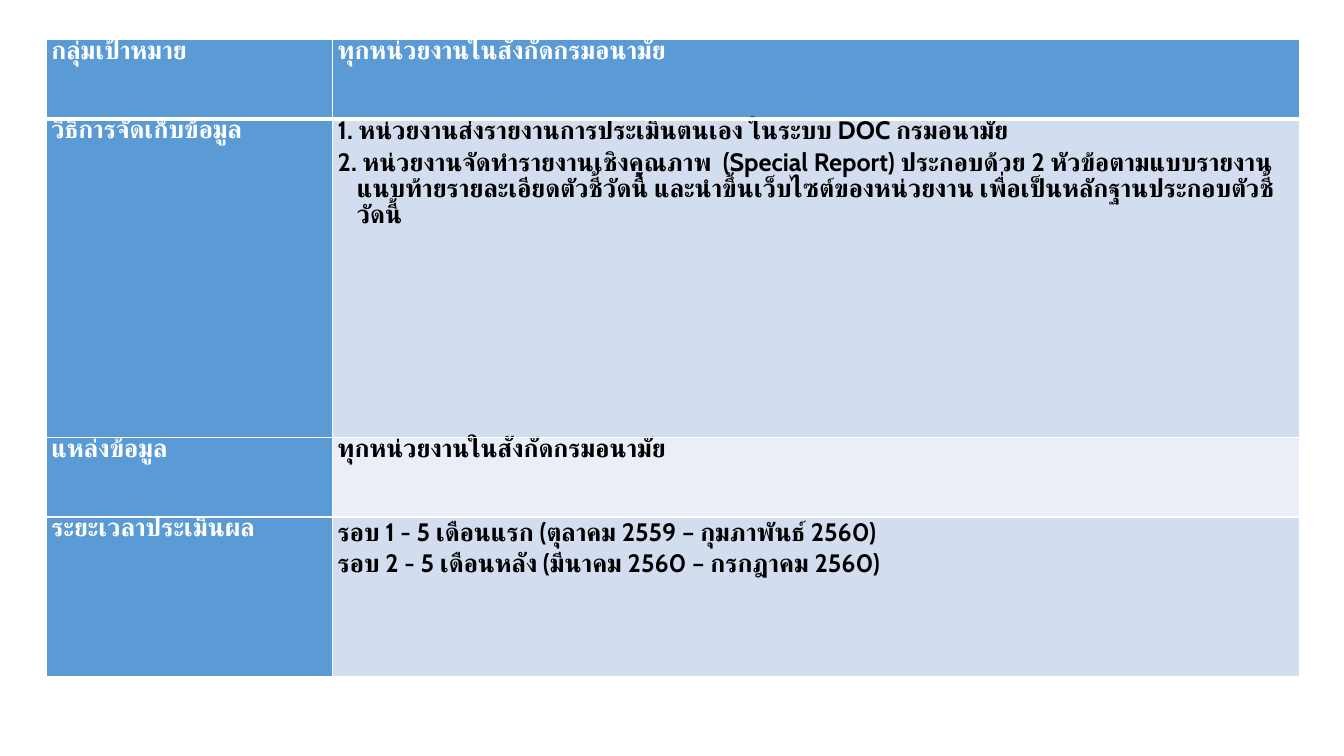
from lxml import etree
from pptx import Presentation
from pptx.dml.color import RGBColor
from pptx.enum.text import MSO_ANCHOR
from pptx.oxml.ns import qn
from pptx.util import Inches, Pt

TOP = MSO_ANCHOR.TOP
COLORS = {"label": "5B9BD5", "odd": "D2DEEF", "even": "EAEFF7", "white": "FFFFFF", "ink": "000000"}
MARGINS = {"margin_left": Inches(0.05), "margin_right": Inches(0.05), "margin_top": 0, "margin_bottom": 0}
TIGHT = {"space_before": Pt(6), "line_spacing": 0.8}
LABEL = {"line_spacing": 0.8}
METHOD = {"space_before": Pt(4), "line_spacing": 0.85}
PERIOD = {"line_spacing": 1.0}
COLUMN_WIDTHS = [2.84, 9.59]
ROW_HEIGHTS = [0.79, 3.16, 0.79, 1.58]
AUDIENCE = "ทุกหน่วยงานในสังกัดกรมอนามัย"
METHODS = [
    "1. หน่วยงานส่งรายงานการประเมินตนเอง ในระบบ DOC กรมอนามัย",
    "2. หน่วยงานจัดทำรายงานเชิงคุณภาพ  (Special Report) ประกอบด้วย 2 หัวข้อตามแบบรายงาน"
    "แนบท้ายรายละเอียดตัวชี้วัดนี้ และนำขึ้นเว็บไซต์ของหน่วยงาน เพื่อเป็นหลักฐานประกอบตัวชี้วัดนี้",
]
PERIODS = [
    "รอบ 1 - 5 เดือนแรก (ตุลาคม 2559 – กุมภาพันธ์ 2560)",
    "รอบ 2 - 5 เดือนหลัง (มีนาคม 2560 – กรกฎาคม 2560)",
]
ROWS = [
    ("กลุ่มเป้าหมาย", TIGHT, [AUDIENCE], TIGHT, "label", "white"),
    ("วิธีการจัดเก็บข้อมูล", LABEL, METHODS, METHOD, "odd", "ink"),
    ("แหล่งข้อมูล", TIGHT, [AUDIENCE], TIGHT, "even", "ink"),
    ("ระยะเวลาประเมินผล", LABEL, PERIODS, PERIOD, "odd", "ink"),
]


def apply(target, values):
    for name, value in values.items():
        setattr(target, name, value)


class IndicatorSlide:
    font = {"name": "Cabin", "size": Pt(18), "bold": True}

    def __init__(self, deck):
        self.slide = deck.slides.add_slide(deck.slide_layouts[6])

    def table(self, left, top, widths, heights):
        frame = self.slide.shapes.add_table(
            len(heights), len(widths), Inches(left), Inches(top),
            Inches(sum(widths)), Inches(sum(heights)))
        for column, width in zip(frame.table.columns, widths):
            column.width = Inches(width)
        for row, height in zip(frame.table.rows, heights):
            row.height = Inches(height)
        return frame.table

    def cell(self, cell, lines, spacing, fill, ink, bottom):
        apply(cell, {**MARGINS, "vertical_anchor": TOP})
        self.borders(cell, bottom)
        cell.fill.solid()
        cell.fill.fore_color.rgb = RGBColor.from_string(COLORS[fill])
        for index, line in enumerate(lines):
            frame = cell.text_frame
            paragraph = frame.add_paragraph() if index else frame.paragraphs[0]
            apply(paragraph, spacing)
            run = paragraph.add_run()
            run.text = line
            apply(run.font, self.font)
            run.font.color.rgb = RGBColor.from_string(COLORS[ink])
            properties = run._r.get_or_add_rPr()
            etree.SubElement(properties, qn("a:cs"), typeface=self.font["name"])

    def borders(self, cell, bottom):
        properties = cell._tc.get_or_add_tcPr()
        for side, width in {"L": 1, "R": 1, "T": 1, "B": bottom}.items():
            line = etree.SubElement(properties, qn(f"a:ln{side}"), w=str(Pt(width)))
            fill = etree.SubElement(line, qn("a:solidFill"))
            etree.SubElement(fill, qn("a:srgbClr"), val=COLORS["white"])

    def hang(self, paragraph, indent):
        properties = paragraph._p.get_or_add_pPr()
        properties.set("marL", str(Inches(indent)))
        properties.set("indent", str(-Inches(indent)))


def main():
    deck = Presentation()
    apply(deck, {"slide_width": Inches(13.33), "slide_height": Inches(7.5)})
    indicator = IndicatorSlide(deck)
    details = indicator.table(0.46, 0.39, COLUMN_WIDTHS, ROW_HEIGHTS)
    for index, (label, label_spacing, lines, spacing, fill, ink) in enumerate(ROWS):
        bottom = 1 if index else 3
        indicator.cell(details.cell(index, 0), [label], label_spacing, "label", "white", bottom)
        indicator.cell(details.cell(index, 1), lines, spacing, fill, ink, bottom)
    indicator.hang(details.cell(1, 1).text_frame.paragraphs[1], 0.19)
    deck.save("out.pptx")


if __name__ == "__main__":
    main()
